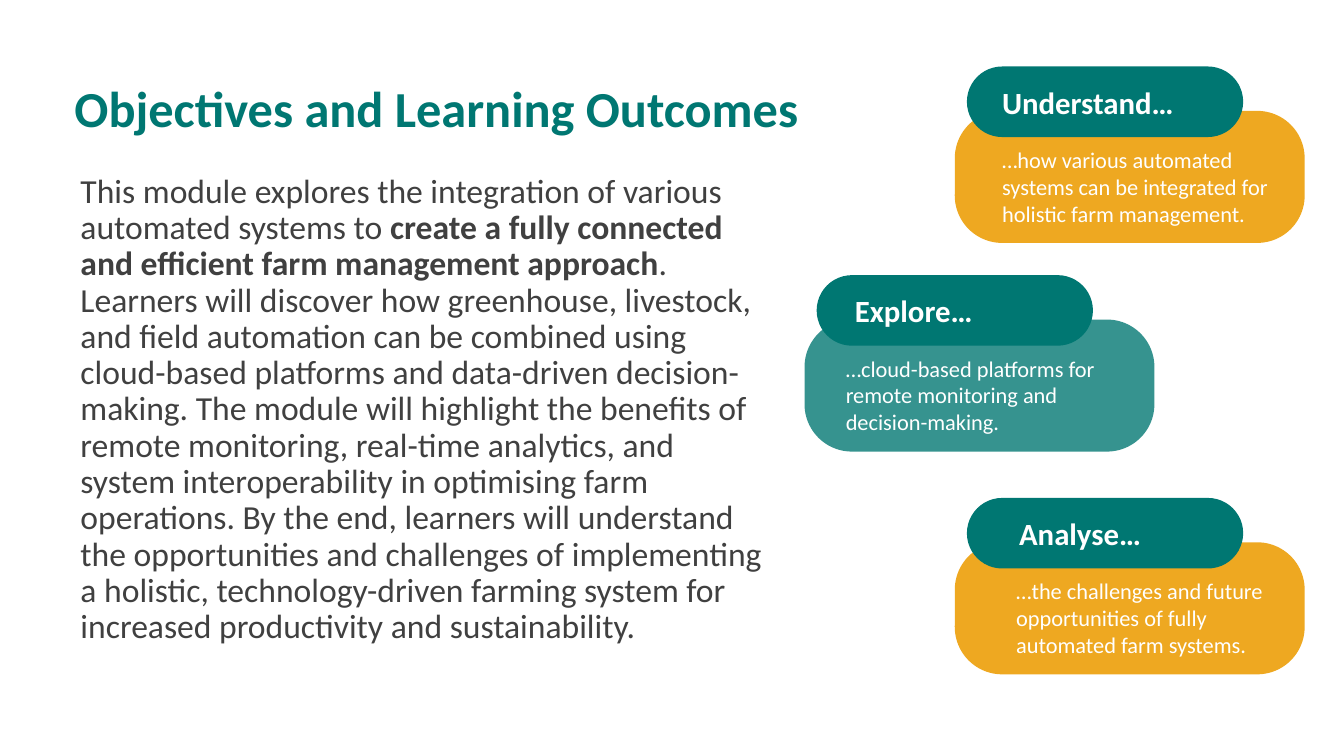
"""Builds the objectives and learning outcomes slide with three outcome cards."""
from dataclasses import dataclass

from lxml import etree
from pptx import Presentation
from pptx.dml.color import RGBColor
from pptx.enum.shapes import MSO_SHAPE
from pptx.enum.text import MSO_ANCHOR
from pptx.oxml.ns import qn
from pptx.slide import Slide
from pptx.util import Inches, Pt

COLORS = {"teal": "007772", "amber": "EEA821", "white": "FFFFFF", "text": "404040"}
FONT = "Calibri"


@dataclass
class Run:
    text: str
    bold: bool = False


@dataclass
class Card:
    x: float
    y: float
    color: str
    label: str
    text: str
    label_dx: float
    text_dx: float
    alpha: int = 100


CARDS = [
    Card(9.47, 1.1, "amber", "Understand…",
         "…how various automated systems can be integrated for holistic farm management.",
         0.37, 0.37),
    Card(7.98, 3.17, "teal", "Explore…",
         "…cloud-based platforms for remote monitoring and decision-making.",
         0.4, 0.31, alpha=79),
    Card(9.47, 5.38, "amber", "Analyse…",
         "…the challenges and future opportunities of fully automated farm systems.",
         0.54, 0.51),
]

TITLE = [Run("Objectives and Learning Outcomes", True)]
INTRO = [
    Run("This module explores the integration of various automated systems to "),
    Run("create a fully connected and efficient farm management approach", True),
    Run(". Learners will discover how greenhouse, livestock, and field automation can be "
        "combined using cloud-based platforms and data-driven decision-making. The module "
        "will highlight the benefits of remote monitoring, real-time analytics, and system "
        "interoperability in optimising farm operations. By the end, learners will "
        "understand the opportunities and challenges of implementing a holistic, "
        "technology-driven farming system for increased productivity and sustainability."),
]


def add_text(s: Slide, x: float, y: float, w: float, h: float, runs: list[Run],
             size: int, color: str, spacing: float = 1.0,
             anchor: MSO_ANCHOR = MSO_ANCHOR.TOP) -> None:
    tf = s.shapes.add_textbox(Inches(x), Inches(y), Inches(w), Inches(h)).text_frame
    tf.word_wrap = True
    tf.vertical_anchor = anchor
    p = tf.paragraphs[0]
    p.line_spacing = spacing
    for run in runs:
        r = p.add_run()
        r.text = run.text
        r.font.name = FONT
        r.font.size = Pt(size)
        r.font.bold = run.bold
        r.font.color.rgb = RGBColor.from_string(COLORS[color])


def add_rounded(s: Slide, x: float, y: float, w: float, h: float, color: str,
                radius: float, alpha: int = 100) -> None:
    sp = s.shapes.add_shape(MSO_SHAPE.ROUNDED_RECTANGLE,
                            Inches(x), Inches(y), Inches(w), Inches(h))
    sp.adjustments[0] = radius / h
    sp.shadow.inherit = False
    sp.line.fill.background()
    sp.fill.solid()
    sp.fill.fore_color.rgb = RGBColor.from_string(COLORS[color])
    if alpha < 100:
        clr = sp.fill._xPr.find(f".//{qn('a:srgbClr')}")
        etree.SubElement(clr, qn("a:alpha")).set("val", str(alpha * 1000))


def add_card(s: Slide, card: Card) -> None:
    x, y = card.x, card.y
    add_rounded(s, x, y, 3.47, 1.31, card.color, 0.47, card.alpha)
    add_rounded(s, x + 0.12, y - 0.44, 2.74, 0.7, "teal", 0.35)
    add_text(s, x + card.label_dx, y - 0.32, 2.74, 0.47, [Run(card.label, True)], 22, "white")
    add_text(s, x + card.text_dx, y + 0.3, 2.85, 0.91, [Run(card.text)], 16, "white")


def main() -> None:
    prs = Presentation()
    prs.slide_width, prs.slide_height = Inches(13.33), Inches(7.5)
    s = prs.slides.add_slide(prs.slide_layouts[6])
    for card in CARDS:
        add_card(s, card)
    add_text(s, 0.7, 1.68, 7.07, 5.41, INTRO, 24, "text", 0.9)
    add_text(s, 0.64, 0.75, 8, 0.71, TITLE, 36, "teal", 0.9, MSO_ANCHOR.MIDDLE)
    prs.save("out.pptx")


if __name__ == "__main__":
    main()
